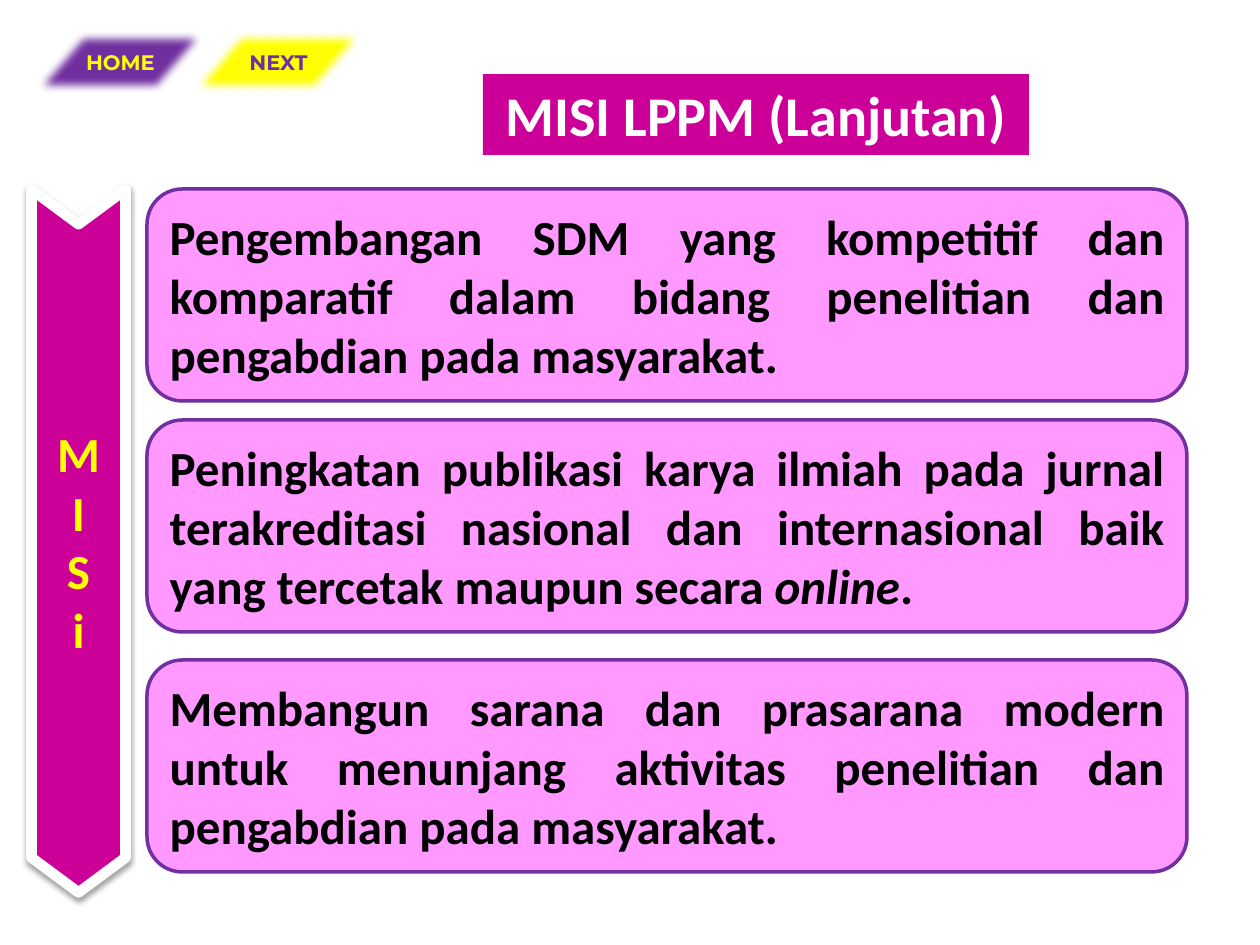
from lxml import etree
from pptx import Presentation
from pptx.dml.color import RGBColor
from pptx.enum.shapes import MSO_SHAPE
from pptx.enum.text import MSO_ANCHOR, MSO_AUTO_SIZE, PP_ALIGN
from pptx.oxml import parse_xml
from pptx.util import Pt

PARALLELOGRAM = MSO_SHAPE.PARALLELOGRAM
ROUNDED = MSO_SHAPE.ROUNDED_RECTANGLE
CHEVRON = MSO_SHAPE.CHEVRON
CENTER, JUSTIFY = PP_ALIGN.CENTER, PP_ALIGN.JUSTIFY
MIDDLE = MSO_ANCHOR.MIDDLE
NO_FIT = MSO_AUTO_SIZE.NONE
NS = "http://schemas.openxmlformats.org/drawingml/2006/main"
PX = 914400 // 126

PURPLE, YELLOW, MAGENTA, PINK = "7030A0", "FFFF00", "CC0099", "FF99FF"
WHITE, BLACK = "FFFFFF", "000000"

TITLE = "MISI LPPM (Lanjutan)"
BUTTONS = [("HOME", PURPLE, YELLOW), ("NEXT", YELLOW, PURPLE)]
BANNER = ["M", "I", "S", "i"]
MISSIONS = [
    (189, [("Pengembangan SDM yang kompetitif dan komparatif dalam bidang "
            "penelitian dan pengabdian pada masyarakat.", False)]),
    (420, [("Peningkatan publikasi karya ilmiah pada jurnal terakreditasi nasional "
            "dan internasional baik yang tercetak maupun secara ", False),
           ("online", True), (".", False)]),
    (660, [("Membangun sarana dan prasarana modern untuk menunjang aktivitas "
            "penelitian dan pengabdian pada masyarakat.", False)]),
]


def rgb(value):
    return RGBColor.from_string(value)


def place(shape, left, top, width, height):
    shape.left, shape.top = left * PX, top * PX
    shape.width, shape.height = width * PX, height * PX


def paint(shape, fill, line=None, line_width=0):
    shape.fill.solid()
    shape.fill.fore_color.rgb = rgb(fill)
    if line:
        shape.line.color.rgb = rgb(line)
        shape.line.width = Pt(line_width)
    else:
        shape.line.fill.background()


def add_shape(slide, kind, box, *colors):
    shape = slide.shapes.add_shape(kind, 0, 0, 0, 0)
    place(shape, *box)
    paint(shape, *colors)
    shape.shadow.inherit = False
    return shape


def write(shape, paragraphs, size, color, align=CENTER, font="Calibri"):
    frame = shape.text_frame
    frame.word_wrap = True
    frame.auto_size = NO_FIT
    frame.vertical_anchor = MIDDLE
    for index, runs in enumerate(paragraphs):
        paragraph = frame.add_paragraph() if index else frame.paragraphs[0]
        paragraph.alignment = align
        paragraph.font.name = font
        paragraph.font.size = Pt(size)
        paragraph.font.bold = True
        paragraph.font.color.rgb = rgb(color)
        for words, italic in runs:
            run = paragraph.add_run()
            run.text = words
            if italic:
                run.font.italic = True


def add_effect(shape, xml):
    effects = shape._element.spPr.find(f"{{{NS}}}effectLst")
    effects.append(parse_xml(xml))


def soften(shape, radius):
    add_effect(shape, f'<a:softEdge xmlns:a="{NS}" rad="{Pt(radius)}"/>')


def drop_shadow(shape, blur, distance, opacity):
    shadow = etree.Element(f"{{{NS}}}outerShdw", blurRad=str(Pt(blur)),
                           dist=str(Pt(distance)), dir="5400000", rotWithShape="0")
    color = etree.SubElement(shadow, f"{{{NS}}}srgbClr", val=BLACK)
    etree.SubElement(color, f"{{{NS}}}alpha", val=str(opacity * 1000))
    add_effect(shape, etree.tostring(shadow))


def main():
    deck = Presentation()
    deck.slide_width, deck.slide_height = 1260 * PX, 945 * PX
    slide = deck.slides.add_slide(deck.slide_layouts[5])

    title = slide.shapes.title
    place(title, 483, 74, 546, 81)
    paint(title, MAGENTA)
    write(title, [[(TITLE, False)]], 32, WHITE)

    for index, (label, fill, color) in enumerate(BUTTONS):
        button = add_shape(slide, PARALLELOGRAM, (21 + 158 * index, 31, 199, 63), fill)
        button.adjustments[0] = 0.87
        soften(button, 5)
        write(button, [[(label, False)]], 12, color, font="Montserrat")

    banner = add_shape(slide, CHEVRON, (-273, 494, 703, 94), MAGENTA, WHITE, 6)
    banner.adjustments[0] = 0.37
    banner.rotation = 90
    drop_shadow(banner, 3.1, 1.8, 35)
    write(banner, [[(letter, False)] for letter in BANNER], 28, YELLOW)
    banner.text_frame._txBody.bodyPr.set("vert", "vert270")

    for top, runs in MISSIONS:
        card = add_shape(slide, ROUNDED, (147, top, 1040, 212), PINK, PURPLE, 2)
        write(card, [runs], 28, BLACK, JUSTIFY)

    deck.save("out.pptx")


if __name__ == "__main__":
    main()
